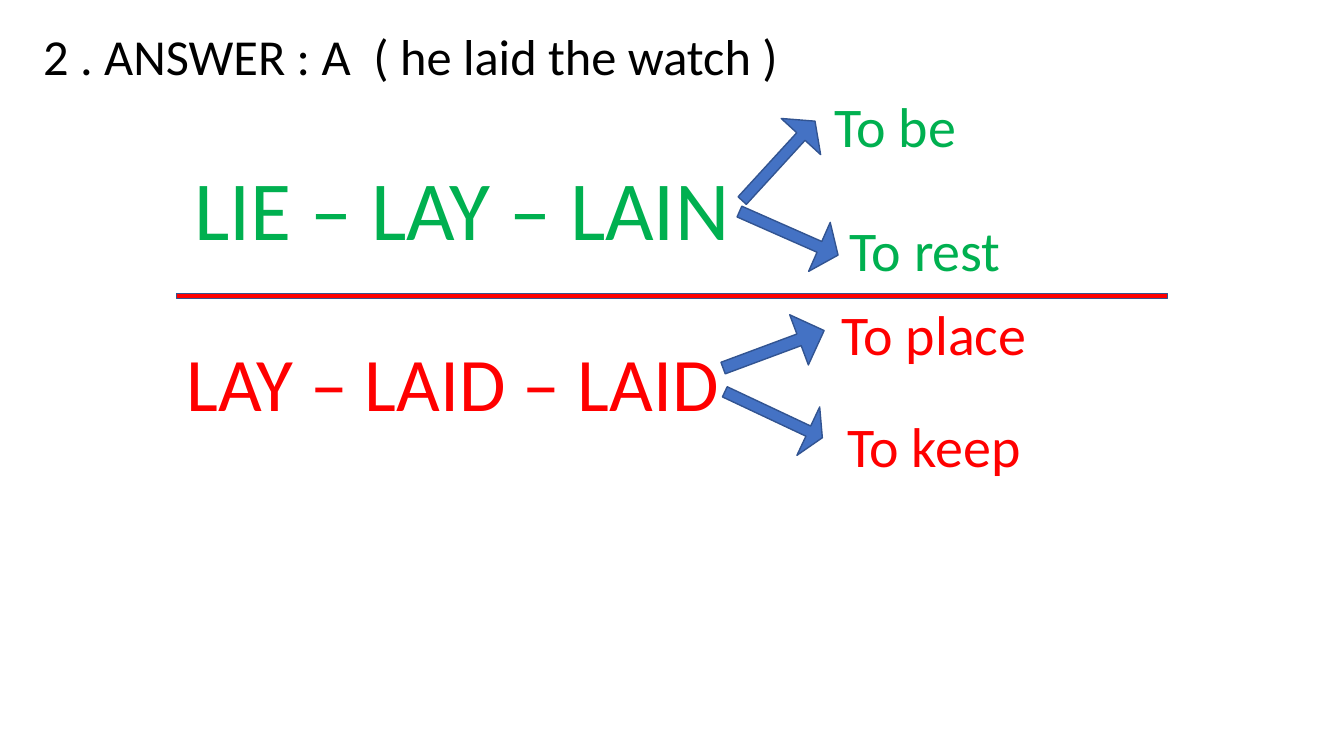
from pptx import Presentation
from pptx.dml.color import RGBColor
from pptx.enum import shapes, text
from pptx.util import Pt

COLORS = {"green": "00B050", "red": "FF0000", "black": "000000",
          "blue": "4472C4", "outline": "325491"}
ARROW_SIZE = (77, 38.2)
LABEL_HEIGHT = 55.4

# Each meaning: label, label offset and width, arrow offset, angle, adjustments
LIE = {
    "forms": "LIE – LAY – LAIN", "color": "green", "size": 60,
    "forms_box": (5.8, 46, 414.7, 79.9),
    "meanings": [
        ("To be", (463, 0), 113, (391.7, 33.8), 312.5, (0.21, 0.39)),
        ("To rest", (473.8, 88.5), 126, (398.9, 85.6), 23.8, (0.22, 0.38)),
    ],
}
LAY = {
    "forms": "LAY – LAID – LAID", "color": "red", "size": 54,
    "forms_box": (0, 26.2, 504, 72.7),
    "meanings": [
        ("To place", (468, 0.2), 162, (388.1, 20.4), 339.6, (0.23, 0.5)),
        ("To keep", (472.3, 80.2), 139.7, (388.1, 67.2), 25.2, (0.21, 0.29)),
    ],
}


def rgb(name):
    return RGBColor.from_string(COLORS[name])


def add_text(slide, box, words, size, color):
    frame = slide.shapes.add_textbox(*map(Pt, box)).text_frame
    frame.word_wrap = True
    frame.auto_size = text.MSO_AUTO_SIZE.SHAPE_TO_FIT_TEXT
    run = frame.paragraphs[0].add_run()
    run.text = words
    for name, value in {"name": "Calibri", "size": Pt(size)}.items():
        setattr(run.font, name, value)
    run.font.color.rgb = rgb(color)


def add_filled(slide, kind, box, fill):
    shape = slide.shapes.add_shape(kind, *map(Pt, box))
    shape.shadow.inherit = False
    shape.fill.solid()
    shape.fill.fore_color.rgb = rgb(fill)
    shape.line.color.rgb = rgb("outline")
    shape.line.width = Pt(1)
    return shape


def add_title(slide, box):
    add_text(slide, box, "2 . ANSWER : A  ( he laid the watch )", 36, "black")


def add_divider(slide, box):
    add_filled(slide, shapes.MSO_SHAPE.RECTANGLE, box, "red")


def add_verb(slide, origin, verb):
    left, top = origin

    def place(offset, size):
        return (left + offset[0], top + offset[1], *size)

    # Principal forms
    forms_box = verb["forms_box"]
    add_text(slide, place(forms_box[:2], forms_box[2:]),
             verb["forms"], verb["size"], verb["color"])

    # Meanings, each with an arrow pointing to it
    for label, label_at, width, arrow_at, angle, adjustments in verb["meanings"]:
        add_text(slide, place(label_at, (width, LABEL_HEIGHT)),
                 label, 40, verb["color"])
        arrow = add_filled(slide, shapes.MSO_SHAPE.RIGHT_ARROW,
                           place(arrow_at, ARROW_SIZE), "blue")
        arrow.rotation = angle
        for index, value in enumerate(adjustments):
            arrow.adjustments[index] = value


def main():
    presentation = Presentation()
    presentation.slide_width, presentation.slide_height = Pt(960), Pt(540)
    slide = presentation.slides.add_slide(presentation.slide_layouts[6])
    add_verb(slide, (126, 62), LIE)
    add_verb(slide, (126, 210), LAY)
    add_divider(slide, (126, 209.5, 708, 3.6))
    add_title(slide, (23.8, 14.4, 552.2, 51.1))
    presentation.save("out.pptx")


if __name__ == "__main__":
    main()
